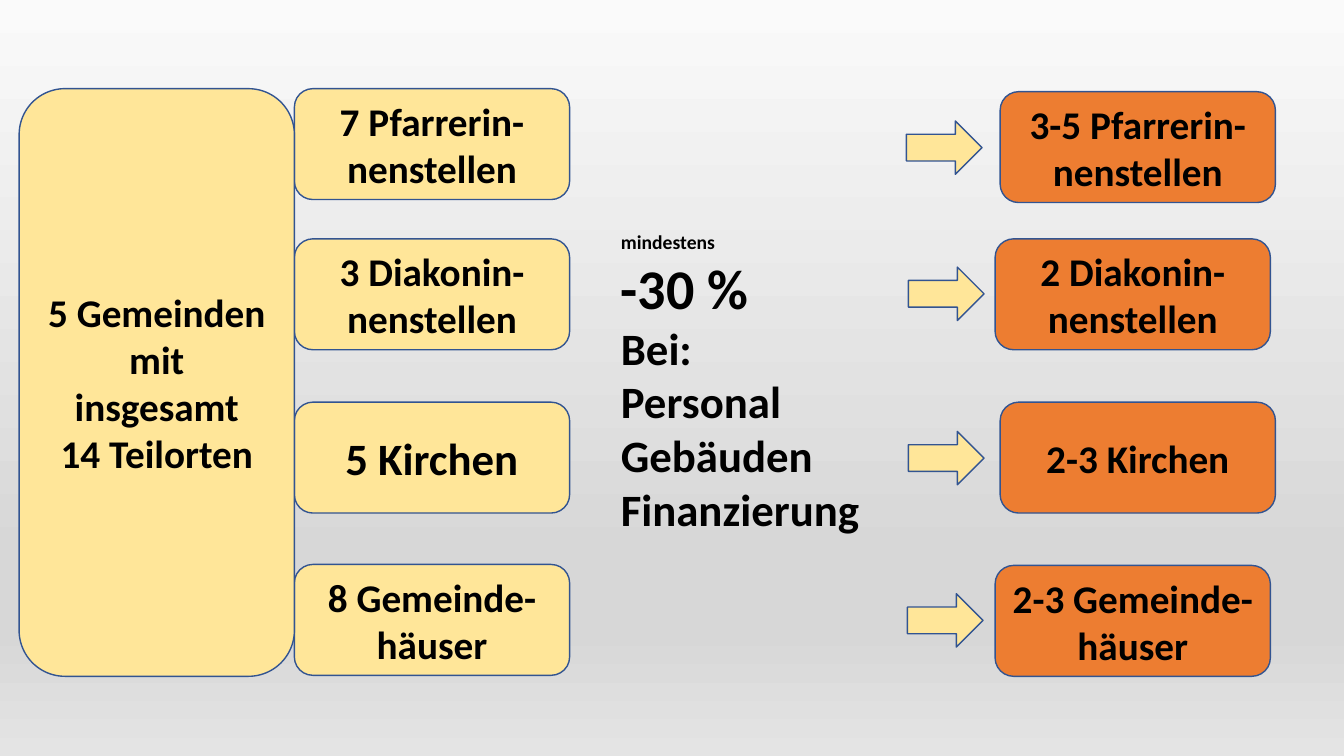
import pptx
import pptx.util
import pptx.dml.color
import pptx.enum.shapes
import pptx.enum.text
import pptx.oxml
import pptx.oxml.ns

Inches = pptx.util.Inches
RGB = pptx.dml.color.RGBColor.from_string
SHAPES = pptx.enum.shapes.MSO_SHAPE
ALIGN = pptx.enum.text.PP_ALIGN
COLORS = {"today": "FFE699", "future": "ED7D31", "outline": "325491", "text": "000000"}
BACKDROP = [(0, "FAFAFA"), (74, "D7D7D7"), (83, "D7D7D7"), (100, "E4E4E4")]
BOX_WIDTH, BOX_HEIGHT = 2.73, 1.1


def write(frame, text, sizes=(28,), align=ALIGN.CENTER, anchor=pptx.enum.text.MSO_ANCHOR.MIDDLE):
    frame.word_wrap = True
    frame.vertical_anchor = anchor
    for index, line in enumerate(text.split("\n")):
        paragraph = frame.paragraphs[0] if index == 0 else frame.add_paragraph()
        paragraph.alignment = align
        run = paragraph.add_run()
        run.text = line
        run.font.name = "Calibri"
        run.font.size = pptx.util.Pt(sizes[min(index, len(sizes) - 1)])
        run.font.bold = True
        run.font.color.rgb = RGB(COLORS["text"])


def draw(kind, left, top, width, height, color):
    shape = slide.shapes.add_shape(kind, Inches(left), Inches(top), Inches(width), Inches(height))
    shape.shadow.inherit = False
    shape.fill.solid()
    shape.fill.fore_color.rgb = RGB(COLORS[color])
    shape.line.color.rgb = RGB(COLORS["outline"])
    shape.line.width = pptx.util.Pt(1)
    return shape


presentation = pptx.Presentation()
presentation.slide_width = Inches(13.33)
presentation.slide_height = Inches(7.5)
slide = presentation.slides.add_slide(presentation.slide_layouts[6])

backdrop = slide.background.fill
backdrop.gradient()
backdrop.gradient_angle = 270
stops = slide.element.find(".//" + pptx.oxml.ns.qn("a:gsLst"))
for stop in list(stops):
    stops.remove(stop)
for position, color in BACKDROP:
    stops.append(pptx.oxml.parse_xml(
        f'<a:gs {pptx.oxml.ns.nsdecls("a")} pos="{position * 1000}"><a:srgbClr val="{color}"/></a:gs>'))

resources_today = [
    ("7 Pfarrerin-nenstellen", 0.88, 28),
    ("3 Diakonin-nenstellen", 2.37, 28),
    ("5 Kirchen", 3.99, 32),
    ("8 Gemeinde-häuser", 5.6, 28),
]
for label, top, size in resources_today:
    resource = draw(SHAPES.ROUNDED_RECTANGLE, 2.92, top, BOX_WIDTH, BOX_HEIGHT, "today")
    write(resource.text_frame, label, sizes=(size,))

parishes = draw(SHAPES.ROUNDED_RECTANGLE, 0.19, 0.88, BOX_WIDTH, 5.83, "today")
write(parishes.text_frame, "5 Gemeinden\nmit\ninsgesamt\n14 Teilorten")

reduction = slide.shapes.add_textbox(Inches(6.06), Inches(2.23), Inches(2.66), Inches(3.16))
write(reduction.text_frame, "mindestens\n-30 %\nBei:\nPersonal\nGebäuden\nFinanzierung",
      sizes=(14, 40, 32), align=ALIGN.LEFT, anchor=pptx.enum.text.MSO_ANCHOR.TOP)
reduction.text_frame.auto_size = pptx.enum.text.MSO_AUTO_SIZE.SHAPE_TO_FIT_TEXT

for left, top in [(8.99, 1.2), (9.01, 2.65), (9.01, 4.28), (9, 5.89)]:
    draw(SHAPES.RIGHT_ARROW, left, top, 0.75, 0.53, "today")

resources_future = [
    ("3-5 Pfarrerin-nenstellen", 9.92, 0.91),
    ("2 Diakonin-nenstellen", 9.87, 2.37),
    ("2-3 Kirchen", 9.92, 3.99),
    ("2-3 Gemeinde-häuser", 9.87, 5.61),
]
for label, left, top in resources_future:
    resource = draw(SHAPES.ROUNDED_RECTANGLE, left, top, BOX_WIDTH, BOX_HEIGHT, "future")
    write(resource.text_frame, label)

presentation.save("out.pptx")
